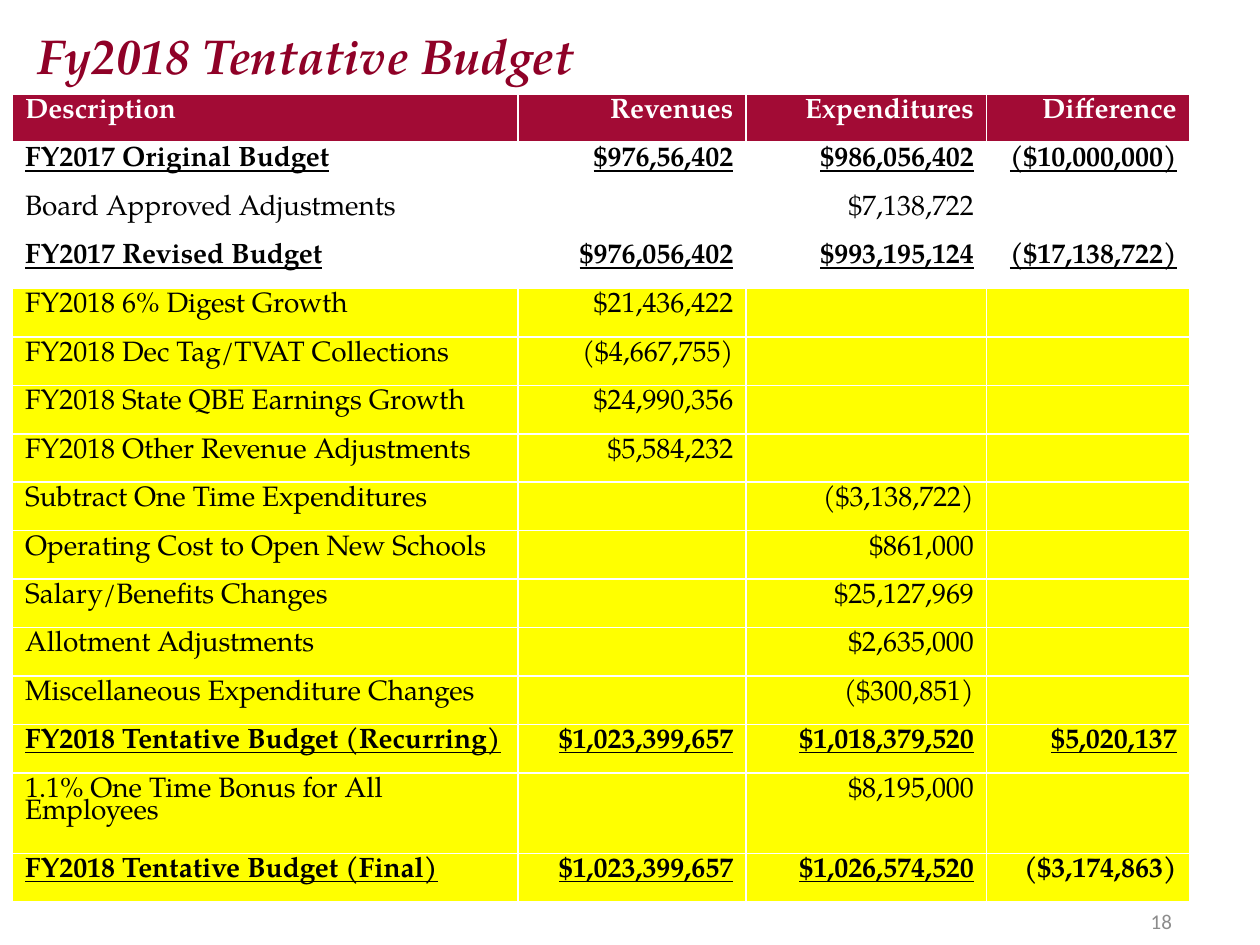
from lxml import etree
from pptx import Presentation
from pptx import util as u
from pptx.dml.color import RGBColor
from pptx.enum import text
from pptx.oxml import ns

CRIMSON = RGBColor(0x8F, 0x01, 0x27)
HEADER = RGBColor(0xA2, 0x0B, 0x35)
YELLOW = RGBColor(0xFF, 0xFF, 0x00)
WHITE = RGBColor(0xFF, 0xFF, 0xFF)
BLACK = RGBColor(0, 0, 0)
GREY = RGBColor(0x8C, 0x8C, 0x8C)

COLUMN_WIDTHS = [4.01, 1.81, 1.91, 1.61]
ROW_HEIGHT, BONUS_HEIGHT = 0.385, 0.64
CURRENT_YEAR_ROWS = range(1, 4)
BONUS = "1.1% One Time Bonus for All Employees"
BUDGET = [
    ("Description", "Revenues", "Expenditures", "Difference"),
    ("FY2017 Original Budget", "$976,56,402", "$986,056,402", "($10,000,000)"),
    ("Board Approved Adjustments", "", "$7,138,722", ""),
    ("FY2017 Revised Budget", "$976,056,402", "$993,195,124", "($17,138,722)"),
    ("FY2018 6% Digest Growth", "$21,436,422", "", ""),
    ("FY2018 Dec Tag/TVAT Collections", "($4,667,755)", "", ""),
    ("FY2018 State QBE Earnings Growth", "$24,990,356", "", ""),
    ("FY2018 Other Revenue Adjustments", "$5,584,232", "", ""),
    ("Subtract One Time Expenditures", "", "($3,138,722)", ""),
    ("Operating Cost to Open New Schools", "", "$861,000", ""),
    ("Salary/Benefits Changes", "", "$25,127,969", ""),
    ("Allotment Adjustments", "", "$2,635,000", ""),
    ("Miscellaneous Expenditure Changes", "", "($300,851)", ""),
    ("FY2018 Tentative Budget (Recurring)", "$1,023,399,657", "$1,018,379,520", "$5,020,137"),
    (BONUS, "", "$8,195,000", ""),
    ("FY2018 Tentative Budget (Final)", "$1,023,399,657", "$1,026,574,520", "($3,174,863)"),
]


class BudgetSlide:
    """Holds the style and the slide, and adds each kind of element."""

    def __init__(self, deck, font="TeX Gyre Pagella"):
        self.deck, self.font = deck, font
        self.slide = deck.slides.add_slide(deck.slide_layouts[6])

    def box(self, left, top, width, height):
        across, down = self.deck.slide_width, self.deck.slide_height
        return int(left * across), int(top * down), int(width * across), int(height * down)

    def style(self, paragraph, size, color, font=None, right=False, **emphasis):
        paragraph.alignment = text.PP_ALIGN.RIGHT if right else text.PP_ALIGN.LEFT
        paragraph.font.name = font or self.font
        paragraph.font.size = u.Pt(size)
        paragraph.font.color.rgb = color
        for name, value in emphasis.items():
            setattr(paragraph.font, name, value)

    def label(self, words, place, size, color, anchor=text.MSO_ANCHOR.TOP, **look):
        frame = self.slide.shapes.add_textbox(*self.box(*place)).text_frame
        frame.word_wrap = True
        frame.vertical_anchor = anchor
        frame.text = words
        self.style(frame.paragraphs[0], size, color, **look)

    def borders(self, cell, bottom):
        properties = cell._tc.get_or_add_tcPr()
        widths = {"lnL": 1, "lnR": 1, "lnT": 1, "lnB": bottom}
        for position, (side, width) in enumerate(widths.items()):
            line = etree.Element(ns.qn(f"a:{side}"), w=str(u.Pt(width)))
            fill = etree.SubElement(line, ns.qn("a:solidFill"))
            etree.SubElement(fill, ns.qn("a:srgbClr"), val=str(WHITE))
            properties.insert(position, line)

    def cell(self, cell, words, fill, color, right, bottom, **emphasis):
        cell.fill.solid()
        cell.fill.fore_color.rgb = fill
        self.borders(cell, bottom)
        cell.text = words
        paragraph = cell.text_frame.paragraphs[0]
        paragraph.line_spacing = 0.8
        self.style(paragraph, 16, color, right=right, **emphasis)

    def table(self, rows, place):
        grid = self.slide.shapes.add_table(len(rows), len(rows[0]), *self.box(*place)).table
        for column, width in zip(grid.columns, COLUMN_WIDTHS):
            column.width = u.Inches(width)
        for r, row in enumerate(rows):
            grid.rows[r].height = u.Inches(BONUS_HEIGHT if row[0] == BONUS else ROW_HEIGHT)
            header, total = r == 0, all(row)
            fill = HEADER if header else WHITE if r in CURRENT_YEAR_ROWS else YELLOW
            for c, words in enumerate(row):
                final_difference = r == len(rows) - 1 and c == len(row) - 1
                self.cell(grid.cell(r, c), words, fill, WHITE if header else BLACK,
                          right=c > 0, bottom=3 if header else 1, bold=total,
                          underline=total and not header and not final_difference)


def main():
    deck = Presentation()
    deck.slide_width, deck.slide_height = u.Inches(10), u.Inches(7.5)
    page = BudgetSlide(deck)
    page.label("18", (0.89, 0.95, 0.05, 0.05), 12, GREY, text.MSO_ANCHOR.MIDDLE,
               font="Calibri", right=True)
    page.label("Fy2018 Tentative Budget", (0.02, 0.02, 0.97, 0.13), 28, CRIMSON,
               bold=True, italic=True)
    page.table(BUDGET, (0.01, 0.1, 0.93, 0.82))
    deck.save("out.pptx")


if __name__ == "__main__":
    main()
